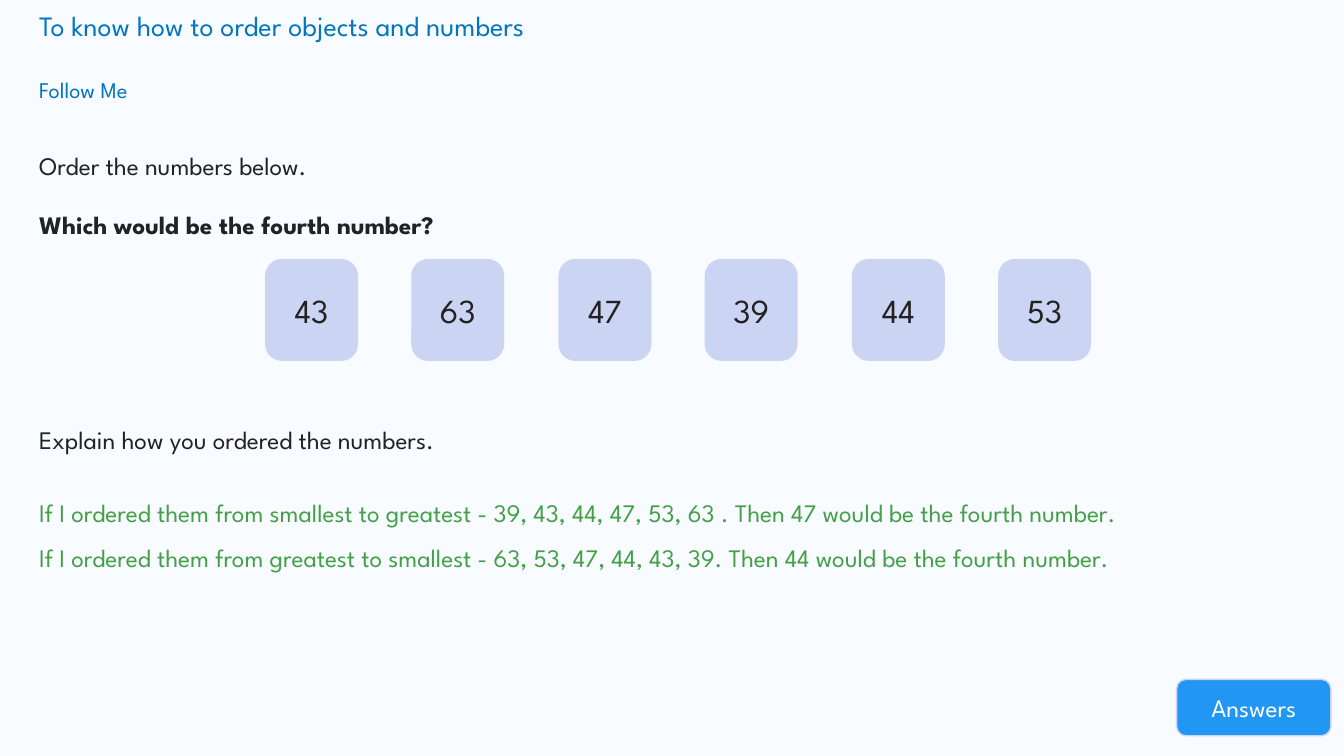
from dataclasses import dataclass

from pptx import Presentation
from pptx.dml.color import RGBColor
from pptx.enum.shapes import MSO_SHAPE
from pptx.enum.text import MSO_ANCHOR, PP_ALIGN
from pptx.slide import Slide
from pptx.text.text import _Paragraph
from pptx.util import Emu, Pt

EMU_PER_PX = 9144  # 100 px to the inch
FONT = "League Spartan"
COLORS = {
    "background": "F8FBFF",
    "heading": "0277BD",
    "body": "222222",
    "answer": "43A047",
    "tile": "CCD4F4",
    "button": "2196F3",
    "button_text": "FFFFFF",
}


@dataclass(frozen=True)
class Passage:
    left: int
    top: int
    width: int
    height: int
    lines: tuple[str, ...]
    size: int
    color: str
    line_spacing: float = 1.0
    space_before: int = 0
    bold_last: bool = False


@dataclass(frozen=True)
class Card:
    left: int
    top: int
    width: int
    height: int
    label: str
    size: int
    color: str
    fill: str
    border: int


def px(length: int) -> Emu:
    return Emu(length * EMU_PER_PX)


def rgb(name: str) -> RGBColor:
    return RGBColor.from_string(COLORS[name])


def style(paragraph: _Paragraph, size: int, color: str, bold: bool = False) -> None:
    for run in paragraph.runs:
        run.font.name = FONT
        run.font.size = Pt(size)
        run.font.bold = bold
        run.font.color.rgb = rgb(color)


def draw_passage(slide: Slide, passage: Passage) -> None:
    box = slide.shapes.add_textbox(
        px(passage.left), px(passage.top), px(passage.width), px(passage.height))
    frame = box.text_frame
    frame.word_wrap = True
    frame.text = "\n".join(passage.lines)
    last = len(passage.lines) - 1
    for index, paragraph in enumerate(frame.paragraphs):
        paragraph.line_spacing = passage.line_spacing
        if index:
            paragraph.space_before = Pt(passage.space_before)
        style(paragraph, passage.size, passage.color, passage.bold_last and index == last)


def draw_card(slide: Slide, card: Card) -> None:
    shape = slide.shapes.add_shape(
        MSO_SHAPE.ROUNDED_RECTANGLE,
        px(card.left), px(card.top), px(card.width), px(card.height))
    shape.shadow.inherit = False
    shape.fill.solid()
    shape.fill.fore_color.rgb = rgb(card.fill)
    shape.line.color.rgb = rgb("tile")
    shape.line.width = Pt(card.border)
    frame = shape.text_frame
    frame.text = card.label
    frame.vertical_anchor = MSO_ANCHOR.MIDDLE
    label = frame.paragraphs[0]
    label.alignment = PP_ALIGN.CENTER
    style(label, card.size, card.color)


# Headings, question and worked answers
PASSAGES = (
    Passage(29, 4, 1234, 44, ("To know how to order objects and numbers",), 20, "heading"),
    Passage(29, 71, 297, 46, ("Follow Me",), 16, "heading"),
    Passage(29, 129, 1284, 130,
            ("Order the numbers below.", "Which would be the fourth number?"),
            18, "body", 1.5, 10, bold_last=True),
    Passage(29, 401, 1284, 56, ("Explain how you ordered the numbers.",), 18, "body", 1.5),
    Passage(29, 473, 1271, 95,
            ("If I ordered them from smallest to greatest - 39, 43, 44, 47, 53, 63 . "
             "Then 47 would be the fourth number.",
             "If I ordered them from greatest to smallest - 63, 53, 47, 44, 43, 39. "
             "Then 44 would be the fourth number."),
            18, "answer", 1.5),
)

# Number tiles, spread evenly between the first and last left edges
NUMBERS = (43, 63, 47, 39, 44, 53)
FIRST_LEFT, LAST_LEFT = 265, 992
PITCH = (LAST_LEFT - FIRST_LEFT) / (len(NUMBERS) - 1)
TILES = tuple(
    Card(round(FIRST_LEFT + i * PITCH), 259, 88, 97, str(number), 24, "body", "tile", 3)
    for i, number in enumerate(NUMBERS)
)
ANSWERS_BUTTON = Card(1167, 674, 153, 56, "Answers", 18, "button_text", "button", 1)


def main() -> None:
    presentation = Presentation()
    presentation.slide_width = px(1333)
    presentation.slide_height = px(750)
    slide = presentation.slides.add_slide(presentation.slide_layouts[6])
    slide.background.fill.solid()
    slide.background.fill.fore_color.rgb = rgb("background")
    for passage in PASSAGES:
        draw_passage(slide, passage)
    for card in (*TILES, ANSWERS_BUTTON):
        draw_card(slide, card)
    presentation.save("out.pptx")


if __name__ == "__main__":
    main()
